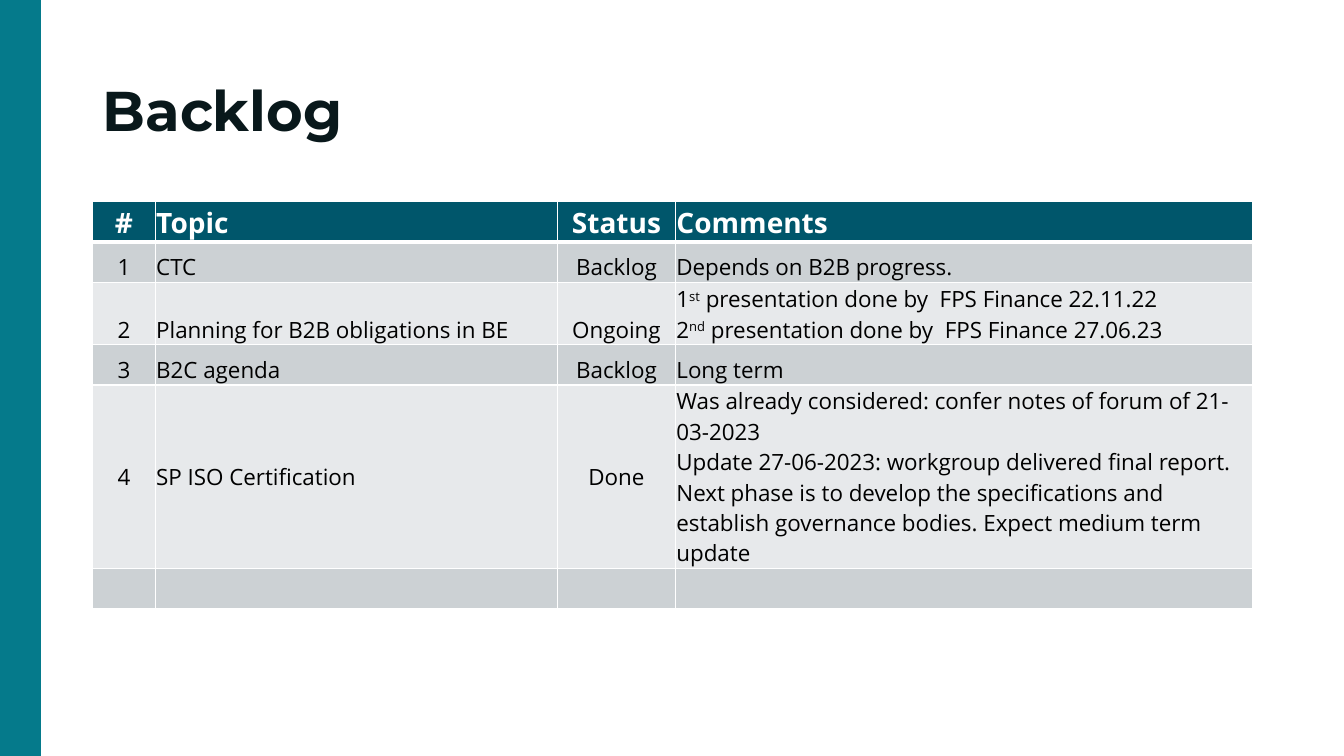
from lxml import etree
from pptx import Presentation
from pptx.dml.color import RGBColor
from pptx.enum.shapes import MSO_CONNECTOR
from pptx.enum.text import MSO_ANCHOR, PP_ALIGN
from pptx.oxml import parse_xml
from pptx.oxml.ns import nsdecls, qn
from pptx.util import Inches, Pt

COLORS = {
    "bar": "057A8B", "title": "09181B", "header": "00566B", "dark_row": "CCD1D4",
    "light_row": "E7E9EB", "white": "FFFFFF", "black": "000000",
}
TITLE_FONT = {"name": "Montserrat", "size": Pt(40), "bold": True}
HEADER_FONT = {"name": "Open Sans", "size": Pt(20), "bold": True}
BODY_FONT = {"name": "Open Sans", "size": Pt(16), "bold": False}
CELL_FORMAT = {
    "margin_left": Inches(0.01), "margin_right": Inches(0.01),
    "margin_top": Inches(0.01), "margin_bottom": 0,
}
COLUMN_WIDTHS = [0.62, 3.99, 1.17, 5.72]
COLUMN_ALIGN = [PP_ALIGN.CENTER, PP_ALIGN.LEFT, PP_ALIGN.CENTER, PP_ALIGN.LEFT]
ROW_HEIGHTS = [0.4, 0.4, 0.62, 0.4, 1.82, 0.4]

# Each cell is a list of paragraphs; carets enclose superscripts.
BACKLOG = [
    [["#"], ["Topic"], ["Status"], ["Comments"]],
    [["1"], ["CTC"], ["Backlog"], ["Depends on B2B progress."]],
    [["2"], ["Planning for B2B obligations in BE"], ["Ongoing"],
     ["1^st^ presentation done by  FPS Finance 22.11.22\n"
      "2^nd^ presentation done by  FPS Finance 27.06.23"]],
    [["3"], ["B2C agenda"], ["Backlog"], ["Long term"]],
    [["4"], ["SP ISO Certification"], ["Done"],
     ["Was already considered: confer notes of forum of 21-03-2023",
      "Update 27-06-2023: workgroup delivered final report. Next phase is to "
      "develop the specifications and establish governance bodies. "
      "Expect medium term update"]],
    [[], [], [], []],
]
MIDDLE_CELLS = {(4, 0), (4, 1), (4, 2)}


def rgb(name):
    return RGBColor.from_string(COLORS[name])


def apply(target, values):
    for name, value in values.items():
        setattr(target, name, value)


def add_run(p, text, font, color):
    r = p.add_run()
    r.text = text
    apply(r.font, font)
    r.font.color.rgb = rgb(color)
    return r


def add_marked_text(p, text, font, color):
    """Write text with line breaks and caret-enclosed superscripts."""
    for n, line in enumerate(text.split("\n")):
        if n:
            p.add_line_break()
        for i, part in enumerate(line.split("^")):
            r = add_run(p, part, font, color)
            if i % 2:
                r.font._element.set("baseline", "30000")


def set_borders(cell, bottom):
    tc_pr = cell._tc.get_or_add_tcPr()
    for side, width in {"L": 1, "R": 1, "T": 1, "B": bottom}.items():
        tc_pr.append(parse_xml(
            f'<a:ln{side} {nsdecls("a")} w="{Pt(width)}"><a:solidFill>'
            f'<a:srgbClr val="{COLORS["white"]}"/></a:solidFill></a:ln{side}>'))


def add_side_bar(slide, x, top, bottom):
    line = slide.shapes.add_connector(
        MSO_CONNECTOR.STRAIGHT, Inches(x), Inches(top), Inches(x), Inches(bottom))
    line.line.color.rgb = rgb("bar")
    line.line.width = Pt(30)
    etree.SubElement(line._element.spPr, qn("a:effectLst"))


def add_title(slide, x, y, w, h):
    box = slide.shapes.add_textbox(Inches(x), Inches(y), Inches(w), Inches(h))
    tf = box.text_frame
    apply(tf, {"word_wrap": True, "vertical_anchor": MSO_ANCHOR.MIDDLE})
    p = tf.paragraphs[0]
    p.line_spacing = 0.9
    add_run(p, "Backlog", TITLE_FONT, "title")


def fill_cell(cell, row, col, paragraphs):
    header = row == 0
    font, color = (HEADER_FONT, "white") if header else (BODY_FONT, "black")
    apply(cell, CELL_FORMAT)
    cell.vertical_anchor = (
        MSO_ANCHOR.MIDDLE if (row, col) in MIDDLE_CELLS else MSO_ANCHOR.BOTTOM)
    set_borders(cell, 3 if header else 1)
    cell.fill.solid()
    cell.fill.fore_color.rgb = rgb(
        "header" if header else "dark_row" if row % 2 else "light_row")
    tf = cell.text_frame
    if not paragraphs:
        tf.paragraphs[0].font.size = BODY_FONT["size"]
    for i, text in enumerate(paragraphs):
        p = tf.add_paragraph() if i else tf.paragraphs[0]
        p.alignment = COLUMN_ALIGN[col]
        add_marked_text(p, text, font, color)


def add_backlog_table(slide, x, y, w):
    frame = slide.shapes.add_table(
        len(BACKLOG), len(COLUMN_WIDTHS), Inches(x), Inches(y), Inches(w),
        Inches(sum(ROW_HEIGHTS)))
    table = frame.table
    for column, width in zip(table.columns, COLUMN_WIDTHS):
        column.width = Inches(width)
    for table_row, height in zip(table.rows, ROW_HEIGHTS):
        table_row.height = Inches(height)
    for row, cells in enumerate(BACKLOG):
        for col, paragraphs in enumerate(cells):
            fill_cell(table.cell(row, col), row, col, paragraphs)


def main():
    prs = Presentation()
    prs.slide_width, prs.slide_height = Inches(13.33), Inches(7.5)
    slide = prs.slides.add_slide(prs.slide_layouts[6])
    add_side_bar(slide, 0.2, -0.08, 7.59)
    add_title(slide, 0.92, 0.4, 11.5, 1.45)
    add_backlog_table(slide, 0.92, 2, 11.5)
    prs.save("out.pptx")


if __name__ == "__main__":
    main()
